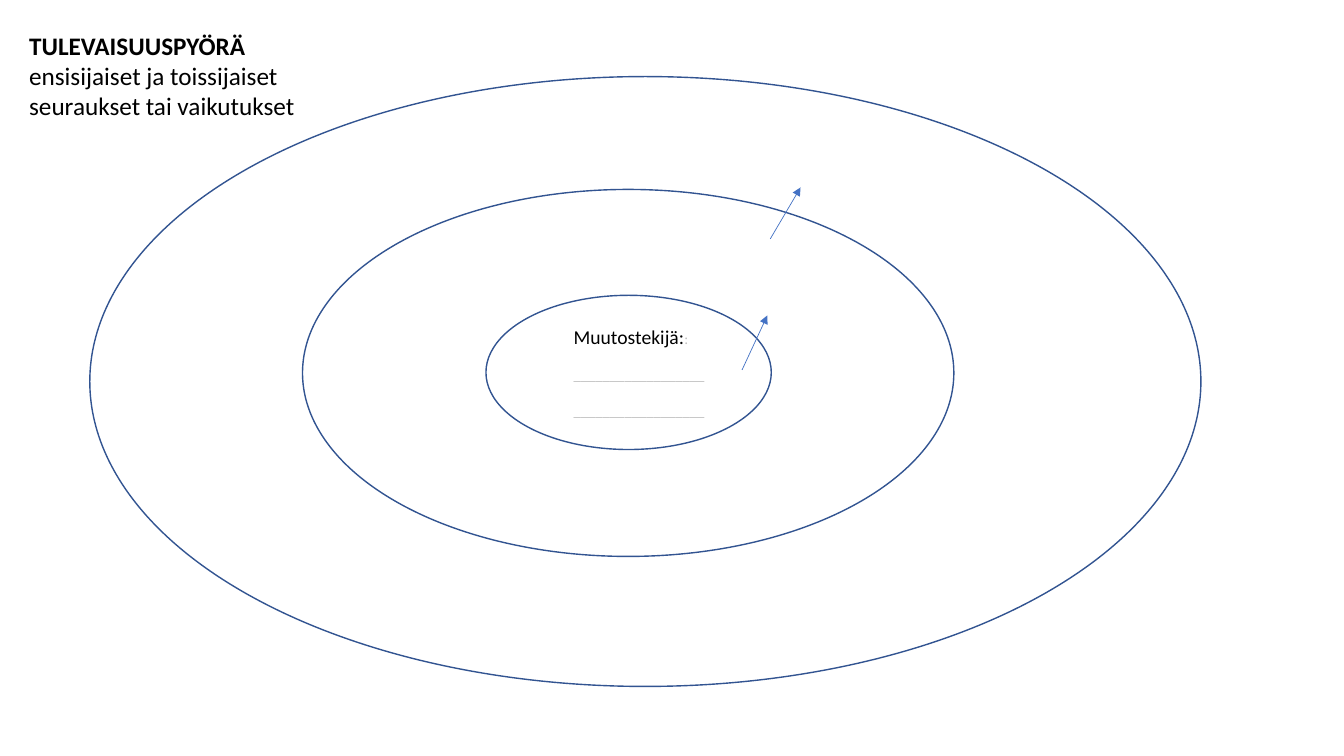
from lxml.etree import SubElement
from pptx import Presentation
from pptx.dml.color import RGBColor
from pptx.enum.shapes import MSO_CONNECTOR, MSO_SHAPE
from pptx.oxml.ns import qn
from pptx.util import Inches, Pt

RINGS = [(35.66, 35.87, 25.68, 25.29), (19.15, 18.51, 58.62, 60.17), (0, 0, 100, 100)]
ARROWS = [(61.25, 26.61, 2.72, -8.43), (58.71, 48.1, 2.27, -8.93)]
LABEL = (42.65, 39.83, 14.61, 17.19)
RULE = "__________________"


def paint(color, code):
    color.rgb = RGBColor.from_string(code)


def part(box, share):
    left, top, width, height = box
    x, y, w, h = (value / 100 for value in share)
    return (int(left + x * width), int(top + y * height),
            int(w * width), int(h * height))


def style(font, size, code):
    font.name = "Calibri"
    font.size = Pt(size)
    paint(font.color, code)


def frame(slide, box):
    text = slide.shapes.add_textbox(*box).text_frame
    text.word_wrap = True
    return text


def ring(slide, box):
    oval = slide.shapes.add_shape(MSO_SHAPE.OVAL, *box)
    oval.shadow.inherit = False
    oval.fill.background()
    paint(oval.line.color, "325491")
    oval.line.width = Pt(1)


def arrow(slide, box):
    x, y, w, h = box
    line = slide.shapes.add_connector(MSO_CONNECTOR.STRAIGHT, x, y, x + w, y + h)
    paint(line.line.color, "4472C4")
    line.line.width = Pt(0.5)
    props = line._element.spPr
    SubElement(props.find(qn("a:ln")), qn("a:tailEnd"), type="triangle")
    SubElement(props, qn("a:effectLst"))


def label(slide, box):
    text = frame(slide, box)
    head = text.paragraphs[0]
    for word, size, code in [("Muutostekijä:", 14, "000000"), (":", 10.5, "BFBFBF")]:
        run = head.add_run()
        run.text = word
        style(run.font, size, code)
    for _ in range(2):
        para = text.add_paragraph()
        para.text = RULE
        para.space_before = Pt(12.8)
        style(para.font, 10.5, "BFBFBF")


def wheel(slide, box):
    for share in RINGS:
        ring(slide, part(box, share))
    label(slide, part(box, LABEL))
    for share in ARROWS:
        arrow(slide, part(box, share))


def title(slide, box):
    para = frame(slide, box).paragraphs[0]
    style(para.font, 18, "000000")
    name = para.add_run()
    name.text = "TULEVAISUUSPYÖRÄ"
    name.font.bold = True
    para.add_run().text = " ensisijaiset ja toissijaiset seuraukset tai vaikutukset"


def main():
    deck = Presentation()
    deck.slide_width = Inches(13.33)
    deck.slide_height = Inches(7.5)
    slide = deck.slides.add_slide(deck.slide_layouts[6])
    page = (0, 0, deck.slide_width, deck.slide_height)
    wheel(slide, part(page, (6.68, 10.13, 82.67, 80.67)))
    title(slide, part(page, (1.43, 3.33, 23.11, 13.47)))
    deck.save("out.pptx")


if __name__ == "__main__":
    main()
